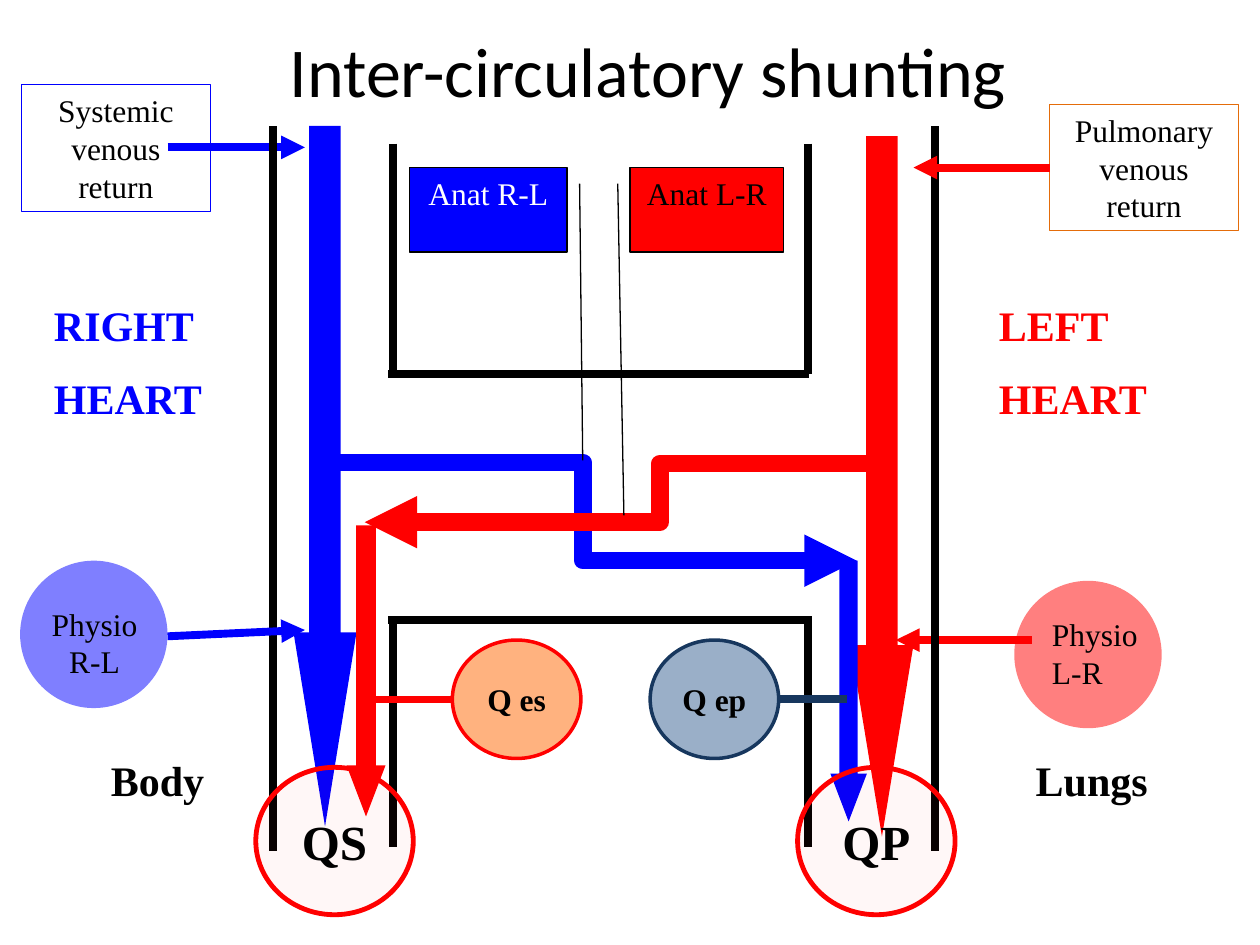
"""Build the inter-circulatory shunting diagram slide."""
from lxml import etree
from pptx import Presentation
from pptx import util as u
from pptx.dml.color import RGBColor
from pptx.enum import shapes, text
from pptx.oxml.ns import qn

BLUE, RED, BLACK, WHITE, NAVY = "0000FF", "FF0000", "000000", "FFFFFF", "17375E"
SERIF = "Times New Roman"
KIND = shapes.MSO_SHAPE
TOP, MIDDLE = text.MSO_ANCHOR.TOP, text.MSO_ANCHOR.MIDDLE
LEFT, CENTER = text.PP_ALIGN.LEFT, text.PP_ALIGN.CENTER

TITLE = "Inter-circulatory shunting"
PHYSIO_DISCS = [((8.05, 4.61, 1.17, 1.17), RED), ((0.16, 4.45, 1.17, 1.17), BLUE)]
BACK_ARROWS = [((1.33, 1.17, 2.42, 1.17), BLUE), ((8.19, 5.08, 7.11, 5.08), RED)]
FRONT_ARROWS = [((8.33, 1.33, 7.25, 1.33), RED), ((1.33, 5.05, 2.42, 5), BLUE)]
OUTER_WALLS, INNER_WALLS = (2.17, 7.42), (3.12, 6.41)
INNER_SPANS = [(1.14, 2.97), (4.89, 6.72)]
CROSS_WALLS = (2.97, 4.92)
FLOWS = [
    ((2.33, 1, 0.5, 5.56), 3.08, BLUE),
    ((6.75, 1.08, 0.5, 5.56), 3.04, RED),
    ((2.75, 4.17, 0.31, 2.31), 1.31, RED),
    ((6.59, 4.45, 0.29, 2.07), 1.31, BLUE),
]
SHUNTS = [
    ((2.58, 3.67, 6.8, 4.45), BLUE, "bentConnector3", 0, (48500,)),
    ((6.48, 4.67, 3.42, 0.56), RED, "bentConnector4", 270, (84800, 43000)),
]
RETURNS = [
    ("Systemic venous return", (0.17, 0.67, 1.5, 1.01), BLUE, MIDDLE),
    ("Pulmonary venous return", (8.33, 0.83, 1.5, 1), "E46C0A", TOP),
]
CALLOUTS = [
    ("Anat R-L", (3.25, 1.33, 1.25, 0.67), BLUE, WHITE, (0.19, 1.08, 3.47, 1.1)),
    ("Anat L-R", (5, 1.33, 1.22, 0.67), RED, BLACK, (0.19, -0.08, 4.12, -0.04)),
]
LABELS = [
    (["Physio R-L"], (0.25, 4.75, 1, 0.7), 18, False, BLACK, CENTER),
    (["Physio L-R"], (8.25, 4.83, 1, 0.7), 18, False, BLACK, LEFT),
    (["Body"], (0, 5.94, 2.5, 0.5), 24, True, BLACK, CENTER),
    (["Lungs"], (7.33, 5.94, 2.67, 0.5), 24, True, BLACK, CENTER),
    (["RIGHT", "HEART"], (0.33, 2.33, 1.5, 1.11), 24, True, BLUE, LEFT),
    (["LEFT", "HEART"], (7.83, 2.33, 1.5, 1.11), 24, True, RED, LEFT),
]
RINGS = [
    ("QS", (2.03, 6.09, 1.25, 1.17), RED, 3, RED, 2.75, 28),
    ("QP", (6.33, 6.09, 1.25, 1.17), RED, 3, RED, 2.75, 28),
    ("Q ep", (5.16, 5.08, 1.02, 0.94), "376092", 50, NAVY, 2, 18),
    ("Q es", (3.59, 5.08, 1.02, 0.94), "FF6600", 50, RED, 2, 18),
]
STEMS = [((6.17, 5.55, 6.72, 5.55), NAVY, 4.75), ((3.59, 5.55, 2.97, 5.55), RED, 4.25)]


def paint(color_format, value):
    """Set a colour from a hex string."""
    color_format.rgb = RGBColor.from_string(value)


def write(shape, lines, size, bold=False, color=BLACK, align=CENTER, anchor=TOP, font=SERIF):
    """Fill a shape with evenly formatted paragraphs."""
    frame = shape.text_frame
    frame.word_wrap = True
    frame.vertical_anchor = anchor
    frame.text = "\n".join(lines)
    for index, para in enumerate(frame.paragraphs):
        para.alignment = align
        para.space_before = u.Pt(13 if index else 0)
        para.font.size, para.font.bold, para.font.name = u.Pt(size), bold, font
        paint(para.font.color, color)


def add_figure(page, kind, place, fill=None, line=None, width=0.75, opacity=100):
    """Add a preset shape with its fill and outline."""
    shape = page.shapes.add_shape(kind, *map(u.Inches, place))
    shape.shadow.inherit = False
    if fill:
        shape.fill.solid()
        paint(shape.fill.fore_color, fill)
        if opacity < 100:
            color = shape.fill._xPr.find(f".//{qn('a:srgbClr')}")
            etree.SubElement(color, qn("a:alpha"), val=str(opacity * 1000))
    else:
        shape.fill.background()
    if line:
        paint(shape.line.color, line)
        shape.line.width = u.Pt(width)
    else:
        shape.line.fill.background()
    return shape


def add_line(page, ends, color, width=4.5, arrow=False, kind=shapes.MSO_CONNECTOR.STRAIGHT):
    """Add a connector, with an arrowhead at its end on request."""
    line = page.shapes.add_connector(kind, *map(u.Inches, ends))
    paint(line.line.color, color)
    line.line.width = u.Pt(width)
    if arrow:
        etree.SubElement(line.line._get_or_add_ln(), qn("a:tailEnd"), type="triangle")
    etree.SubElement(line._element.spPr, qn("a:effectLst"))
    return line


def add_shunt(page, ends, color, preset, turn, bends):
    """Add a bent arrow with its turning points."""
    line = add_line(page, ends, color, 10, True, shapes.MSO_CONNECTOR.ELBOW)
    properties = line._element.spPr
    properties.find(qn("a:xfrm")).set("rot", str(turn * 60000))
    geometry = properties.find(qn("a:prstGeom"))
    geometry.set("prst", preset)
    guides = geometry.find(qn("a:avLst"))
    for number, bend in enumerate(bends, 1):
        etree.SubElement(guides, qn("a:gd"), name=f"adj{number}", fmla=f"val {bend}")


def main():
    """Compose and save the slide."""
    deck = Presentation()
    deck.slide_width, deck.slide_height = u.Inches(10), u.Inches(7.5)
    page = deck.slides.add_slide(deck.slide_layouts[5])

    title = page.shapes.title
    title.left, title.top, title.width, title.height = map(u.Inches, (2.2, 0.17, 5.97, 0.77))
    write(title, [TITLE], 40, align=LEFT, font="Calibri")
    title.text_frame.word_wrap = False
    title.text_frame.auto_size = text.MSO_AUTO_SIZE.NONE

    for place, color in PHYSIO_DISCS:
        add_figure(page, KIND.OVAL, place, color, opacity=50)
    for ends, color in BACK_ARROWS:
        add_line(page, ends, color, arrow=True)

    walls = [(x, 1, x, 6.75) for x in OUTER_WALLS]
    walls += [(x, top, x, bottom) for top, bottom in INNER_SPANS for x in INNER_WALLS]
    walls += [(3.08, y, 6.42, y) for y in CROSS_WALLS]
    for ends in walls:
        add_line(page, ends, BLACK)

    for place, head, color in FLOWS:
        arrow = add_figure(page, KIND.DOWN_ARROW, place, color)
        arrow.adjustments[0], arrow.adjustments[1] = 0.5, head
    for shunt in SHUNTS:
        add_shunt(page, *shunt)

    for words, place, color, anchor in RETURNS:
        write(add_figure(page, KIND.RECTANGLE, place, line=color), [words], 18, anchor=anchor)
    for words, place, fill, color, pointer in CALLOUTS:
        callout = add_figure(page, KIND.LINE_CALLOUT_1, place, fill, BLACK)
        for index, value in enumerate(pointer):
            callout.adjustments[index] = value
        write(callout, [words], 18, color=color)

    for ends, color in FRONT_ARROWS:
        add_line(page, ends, color, arrow=True)
    for lines, place, *style in LABELS:
        write(page.shapes.add_textbox(*map(u.Inches, place)), lines, *style)
    for words, place, fill, opacity, line, width, size in RINGS:
        ring = add_figure(page, KIND.OVAL, place, fill, line, width, opacity)
        write(ring, [words], size, bold=True, anchor=MIDDLE)
    for stem in STEMS:
        add_line(page, *stem)

    deck.save("out.pptx")


if __name__ == "__main__":
    main()
